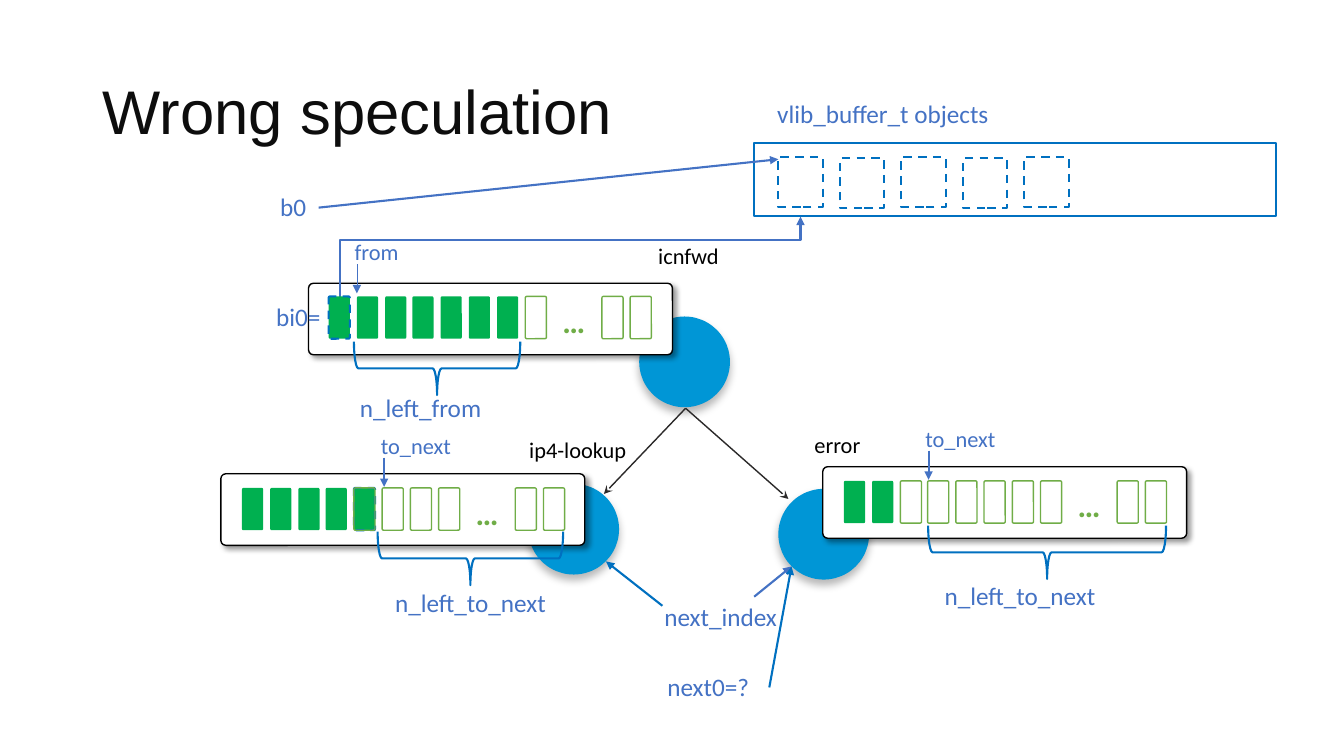
import pptx
import pptx.util
import pptx.dml.color
import pptx.enum.dml
import pptx.enum.shapes
import pptx.enum.text
import pptx.oxml
import pptx.oxml.ns

COLORS = {
    "ink": "0D0D0D", "black": "000000", "white": "FFFFFF", "arrow": "2B2929",
    "label": "4472C4", "outline": "0070C0", "node": "0096D6",
    "full": "00B050", "free": "70AD47",
}
SHAPE = pptx.enum.shapes.MSO_SHAPE
LINK = pptx.enum.shapes.MSO_CONNECTOR
EMU_PER_PX = 9144
CELL_PITCH = 27.8
DOTS_SLOT = 8
LAST_SLOTS = (9.76, 10.76)


def px(n):
    return pptx.util.Emu(round(n) * EMU_PER_PX)


def rgb(name):
    return pptx.dml.color.RGBColor.from_string(COLORS[name])


class Diagram:
    """Draws styled elements of the buffer diagram on one slide."""

    def __init__(self, prs):
        self.slide = prs.slides.add_slide(prs.slide_layouts[5])
        self.shapes = self.slide.shapes

    def font(self, p, size, color, name="Calibri", bold=False):
        for r in p.runs:
            r.font.size = pptx.util.Pt(size)
            r.font.name = name
            r.font.bold = bold
            r.font.color.rgb = rgb(color)

    def title(self, text, x, y, w, h):
        sp = self.shapes.title
        sp.left, sp.top, sp.width, sp.height = px(x), px(y), px(w), px(h)
        tf = sp.text_frame
        tf.text = text
        tf.auto_size = pptx.enum.text.MSO_AUTO_SIZE.NONE
        tf.vertical_anchor = pptx.enum.text.MSO_ANCHOR.MIDDLE
        p = tf.paragraphs[0]
        p.alignment = pptx.enum.text.PP_ALIGN.LEFT
        p.line_spacing = 0.9
        self.font(p, 44, "ink", "Arial")

    def text(self, text, x, y, w, h=40, size=18, color="label", wrap=True, bold=False):
        sp = self.shapes.add_textbox(px(x), px(y), px(w), px(h))
        tf = sp.text_frame
        tf.text = text
        tf.word_wrap = wrap
        tf.auto_size = pptx.enum.text.MSO_AUTO_SIZE.SHAPE_TO_FIT_TEXT
        self.font(tf.paragraphs[0], size, color, bold=bold)
        return sp

    def tag(self, text, x, y, w, color="label"):
        self.text(text, x, y, w, 37, 16, color, wrap=False)

    def shape(self, kind, x, y, w, h, fill=None, line=None, width=1.0, dash=False):
        sp = self.shapes.add_shape(kind, px(x), px(y), px(w), px(h))
        sp.shadow.inherit = False
        if fill:
            sp.fill.solid()
            sp.fill.fore_color.rgb = rgb(fill)
        else:
            sp.fill.background()
        if line:
            sp.line.color.rgb = rgb(line)
            sp.line.width = pptx.util.Pt(width)
            if dash:
                sp.line.dash_style = pptx.enum.dml.MSO_LINE.DASH
        else:
            sp.line.fill.background()
        if kind == SHAPE.ROUNDED_RECTANGLE:
            sp.adjustments[0] = 0.07
        return sp

    def shadow(self, sp, opacity, blur, dist, angle):
        effects = sp._element.spPr.find(pptx.oxml.ns.qn("a:effectLst"))
        effects.append(pptx.oxml.parse_xml(
            f'<a:outerShdw {pptx.oxml.ns.nsdecls("a")} blurRad="{blur * 12700}" '
            f'dist="{dist * 12700}" dir="{angle * 60000}" algn="ctr" rotWithShape="0">'
            f'<a:srgbClr val="{COLORS["black"]}"><a:alpha val="{opacity * 1000}"/>'
            '</a:srgbClr></a:outerShdw>'))

    def node(self, x, y):
        self.shadow(self.shape(SHAPE.OVAL, x, y, 90, 90, "node"), 27, 6, 4, 90)

    def frame(self, x, y):
        sp = self.shape(SHAPE.ROUNDED_RECTANGLE, x, y, 361, 71, "white", "black")
        self.shadow(sp, 40, 4, 3, 45)

    def cell(self, x, y, **style):
        self.shape(SHAPE.ROUNDED_RECTANGLE, x, y, 21, 42, **style)

    def cells(self, x, y, full, current=None):
        for slot in (*range(DOTS_SLOT), *LAST_SLOTS):
            left = x + slot * CELL_PITCH
            if slot == current:
                self.cell(left, y, fill="full", line="outline", width=1.5, dash=True)
            elif slot < full:
                self.cell(left, y, fill="full")
            else:
                self.cell(left, y, line="free")
        dots = self.text("…", x + DOTS_SLOT * CELL_PITCH, y, 43, 49, 23, "free",
                         wrap=False, bold=True)
        dots.fill.solid()
        dots.fill.fore_color.rgb = rgb("white")

    def brace(self, x, y, w, h=53):
        sp = self.shape(SHAPE.RIGHT_BRACE, x + (w - h) / 2, y + (h - w) / 2, h, w,
                        line="outline", width=1.5)
        sp.rotation = 90

    def arrow(self, x1, y1, x2, y2, color="label", width=1.5, head="triangle",
              kind=LINK.STRAIGHT):
        c = self.shapes.add_connector(kind, px(x1), px(y1), px(x2), px(y2))
        c.line.color.rgb = rgb(color)
        c.line.width = pptx.util.Pt(width)
        ns = pptx.oxml.ns.nsdecls("a")
        c.line._get_or_add_ln().append(
            pptx.oxml.parse_xml(f'<a:tailEnd {ns} type="{head}"/>'))
        c._element.spPr.append(pptx.oxml.parse_xml(f"<a:effectLst {ns}/>"))
        return c

    def elbow_up(self, x1, y1, x2, y2, bend):
        cx, cy = (x1 + x2) / 2, (y1 + y2) / 2
        dx, dy = (y1 - y2) / 2, (x2 - x1) / 2
        c = self.arrow(cx + dx, cy + dy, cx - dx, cy - dy, kind=LINK.ELBOW)
        spPr = c._element.spPr
        spPr.xfrm.set("rot", str(90 * 60000))
        geom = spPr.find(pptx.oxml.ns.qn("a:prstGeom"))
        guides = geom.find(pptx.oxml.ns.qn("a:avLst"))
        guides.append(pptx.oxml.parse_xml(
            f'<a:gd {pptx.oxml.ns.nsdecls("a")} name="adj1" '
            f'fmla="val {round(bend * 100000)}"/>'))


def main():
    prs = pptx.Presentation()
    prs.slide_width, prs.slide_height = px(1333), px(750)
    d = Diagram(prs)
    d.title("Wrong speculation", 92, 41, 1035, 145)

    for x, y in ((634, 314), (524, 480), (772, 485)):
        d.node(x, y)
    for x, y in ((306, 281), (219, 470), (816, 463)):
        d.frame(x, y)
    for name, x, y, w in (("icnfwd", 643, 235, 81), ("ip4-lookup", 515, 428, 118),
                          ("error", 798, 423, 67)):
        d.tag(name, x, y, w, "black")
    for x, y in ((599, 490), (782, 495)):
        d.arrow(680, 405, x, y, "arrow", 1, "stealth")

    d.tag("from", 342, 231, 64)
    d.arrow(354, 262, 354, 291, width=0.5)
    d.elbow_up(337, 304, 794, 215, 0.74)

    d.cells(326, 294, full=7, current=0)
    d.cells(240, 484, full=5, current=4)
    d.cell(351, 484, line="free")
    d.cells(837, 477, full=2)

    for x, y, w in ((351, 339, 165), (375, 528, 184), (920, 521, 236)):
        d.brace(x, y, w)
    for x, y in ((368, 424), (908, 417)):
        d.tag("to_next", x, y, 91)
        d.arrow(x + 13, y + 30, x + 13, y + 59)

    for label, x, y, w in (
            ("n_left_from", 347, 384, 181), ("n_left_to_next", 382, 578, 181),
            ("n_left_to_next", 927, 571, 181), ("bi0=", 264, 294, 64),
            ("b0", 268, 185, 191), ("next_index", 649, 592, 168),
            ("next0=?", 652, 661, 111), ("vlib_buffer_t objects", 761, 93, 505)):
        d.text(label, x, y, w)

    d.shape(SHAPE.RECTANGLE, 748, 142, 518, 72, line="outline", width=1.5)
    for i in range(5):
        d.shape(SHAPE.RECTANGLE, 772 + i * 61, 156 + i % 2, 44, 49,
                line="outline", width=1.5, dash=True)

    d.arrow(316, 206, 772, 158)
    d.arrow(657, 601, 601, 557, "outline")
    d.arrow(748, 592, 785, 562)
    d.arrow(763, 682, 785, 562, "outline")
    prs.save("out.pptx")


if __name__ == "__main__":
    main()
